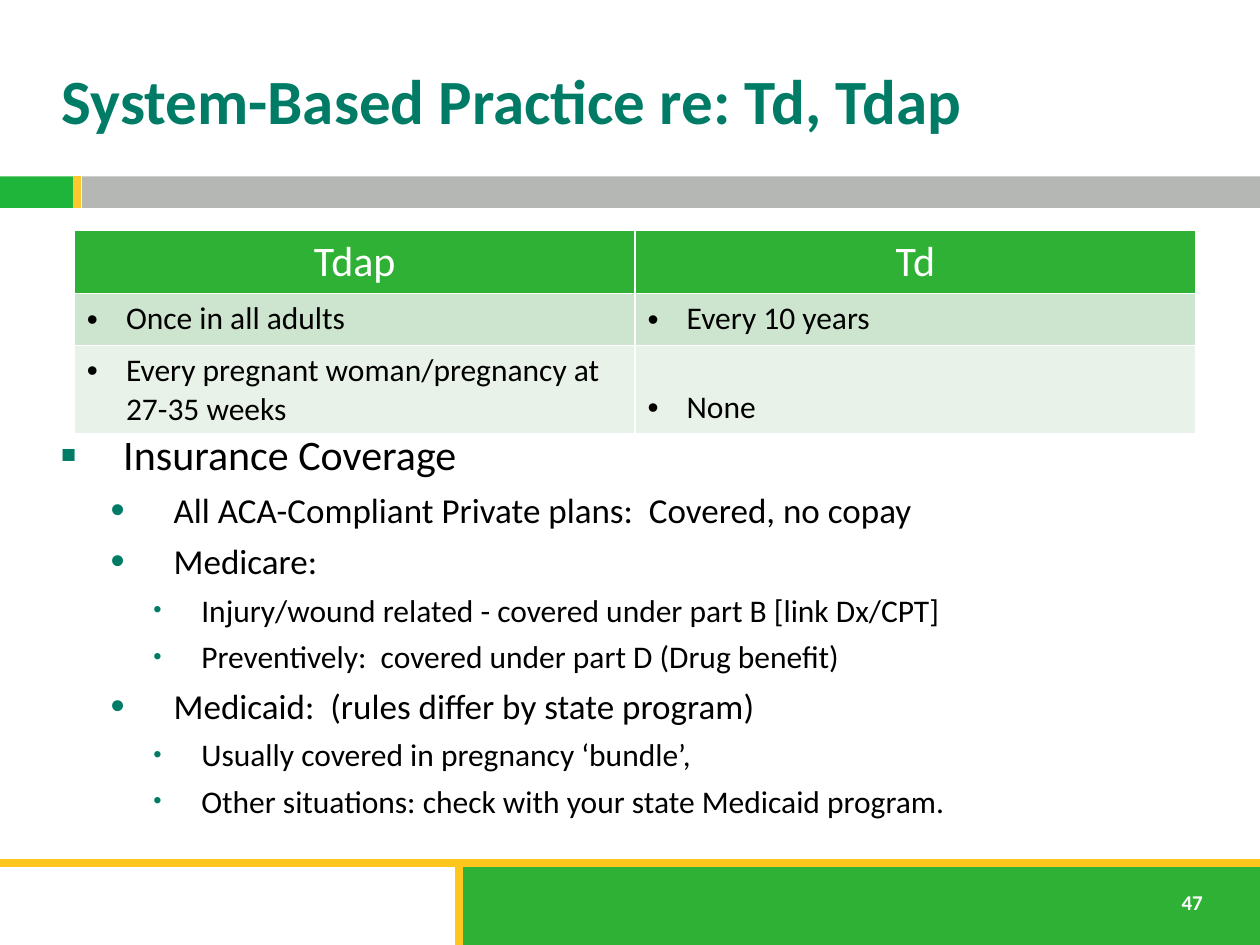
from lxml.etree import SubElement
from pptx import Presentation
from pptx.dml.color import RGBColor
from pptx.enum.shapes import MSO_CONNECTOR as CONNECTOR, MSO_SHAPE as SHAPE
from pptx.enum.text import MSO_ANCHOR as ANCHOR, PP_ALIGN as ALIGN
from pptx.oxml.ns import qn
from pptx.util import Inches, Pt

GREEN, TEAL, WHITE, BLACK = "2EB135", "007C66", "FFFFFF", "000000"


def style(paragraph, size, color, bold=False):
    for run in paragraph.runs:
        run.font.name = "Calibri"
        run.font.size = Pt(size)
        run.font.bold = bold
        run.font.color.rgb = RGBColor.from_string(color)


def add_bullet(paragraph, char, color, percent, margin, hanging):
    props = paragraph._p.get_or_add_pPr()
    props.set("marL", str(Inches(margin)))
    props.set("indent", str(-Inches(hanging)))
    bullet_color = SubElement(props, qn("a:buClr"))
    SubElement(bullet_color, qn("a:srgbClr"), val=color)
    SubElement(props, qn("a:buSzPct"), val=str(percent * 1000))
    SubElement(props, qn("a:buFont"), typeface="Arial")
    SubElement(props, qn("a:buChar"), char=char)


prs = Presentation()
prs.slide_width, prs.slide_height = Inches(10), Inches(7.5)
slide = prs.slides.add_slide(prs.slide_layouts[5])
shapes = slide.shapes

bands = [
    (0, 1.4, 0.58, 0.25, "1EB53A"),
    (0.65, 1.4, 9.35, 0.25, "B5B7B4"),
    (3.62, 6.84, 6.38, 0.66, GREEN),
]
for left, top, width, height, color in bands:
    band = shapes.add_shape(SHAPE.RECTANGLE, Inches(left), Inches(top), Inches(width), Inches(height))
    band.shadow.inherit = False
    band.fill.solid()
    band.fill.fore_color.rgb = RGBColor.from_string(color)
    band.line.fill.background()

rules = [
    (0, 6.85, 10, 6.85, "FFC61E"),
    (3.64, 6.86, 3.64, 7.5, "FFC61E"),
    (0.61, 1.4, 0.61, 1.65, "FFC82E"),
]
for x1, y1, x2, y2, color in rules:
    rule = shapes.add_connector(CONNECTOR.STRAIGHT, Inches(x1), Inches(y1), Inches(x2), Inches(y2))
    rule.line.color.rgb = RGBColor.from_string(color)
    rule.line.width = Pt(4.5)
    SubElement(rule._element.spPr, qn("a:effectLst"))

page_number = shapes.add_textbox(Inches(9.28), Inches(7.01), Inches(0.4), Inches(0.3)).text_frame
page_number.text = "47"
style(page_number.paragraphs[0], 12, WHITE, bold=True)

title = shapes.title
title.left, title.top, title.width, title.height = Inches(0.39), Inches(0.25), Inches(9.61), Inches(1.08)
title.text_frame.text = "System-Based Practice re: Td, Tdap"
title.text_frame.vertical_anchor = ANCHOR.MIDDLE
title.text_frame.paragraphs[0].alignment = ALIGN.LEFT
style(title.text_frame.paragraphs[0], 36, TEAL, bold=True)

levels = [
    ("▪", 115, 0.5, 0.5, 24, 7),
    ("•", 115, 0.9, 0.5, 20, 5.5),
    ("•", 75, 1.12, 0.38, 18, 5),
]
coverage = [
    (0, "Insurance Coverage"),
    (1, "All ACA-Compliant Private plans:  Covered, no copay"),
    (1, "Medicare:"),
    (2, "Injury/wound related - covered under part B [link Dx/CPT]"),
    (2, "Preventively:  covered under part D (Drug benefit)"),
    (1, "Medicaid:  (rules differ by state program)"),
    (2, "Usually covered in pregnancy ‘bundle’,"),
    (2, "Other situations: check with your state Medicaid program."),
]
body = shapes.add_textbox(Inches(0.38), Inches(3.35), Inches(9.1), Inches(3.45)).text_frame
body.word_wrap = True
for index, (level, text) in enumerate(coverage):
    char, percent, margin, hanging, size, space = levels[level]
    paragraph = body.add_paragraph() if index else body.paragraphs[0]
    paragraph.text = text
    paragraph.level = level
    add_bullet(paragraph, char, TEAL, percent, margin, hanging)
    paragraph.space_before = Pt(space if index else 0)
    style(paragraph, size, BLACK)

schedule = [
    ("Tdap", "Td"),
    ("Once in all adults", "Every 10 years"),
    ("Every pregnant woman/pregnancy at 27-35 weeks", "None"),
]
row_heights = [0.5, 0.41, 0.7]
row_fills = [GREEN, "CDE4CE", "E8F2E8"]
vaccines = shapes.add_table(3, 2, Inches(0.59), Inches(1.83), Inches(8.9), Inches(1.61)).table
for r, texts in enumerate(schedule):
    vaccines.rows[r].height = Inches(row_heights[r])
    for c, text in enumerate(texts):
        cell = vaccines.cell(r, c)
        cell.text = text
        cell.fill.solid()
        cell.fill.fore_color.rgb = RGBColor.from_string(row_fills[r])
        paragraph = cell.text_frame.paragraphs[0]
        if r == 0:
            paragraph.alignment = ALIGN.CENTER
            style(paragraph, 24, WHITE)
        else:
            add_bullet(paragraph, "•", BLACK, 100, 0.31, 0.31)
            style(paragraph, 18, BLACK)
vaccines.cell(2, 1).vertical_anchor = ANCHOR.BOTTOM

prs.save("out.pptx")
